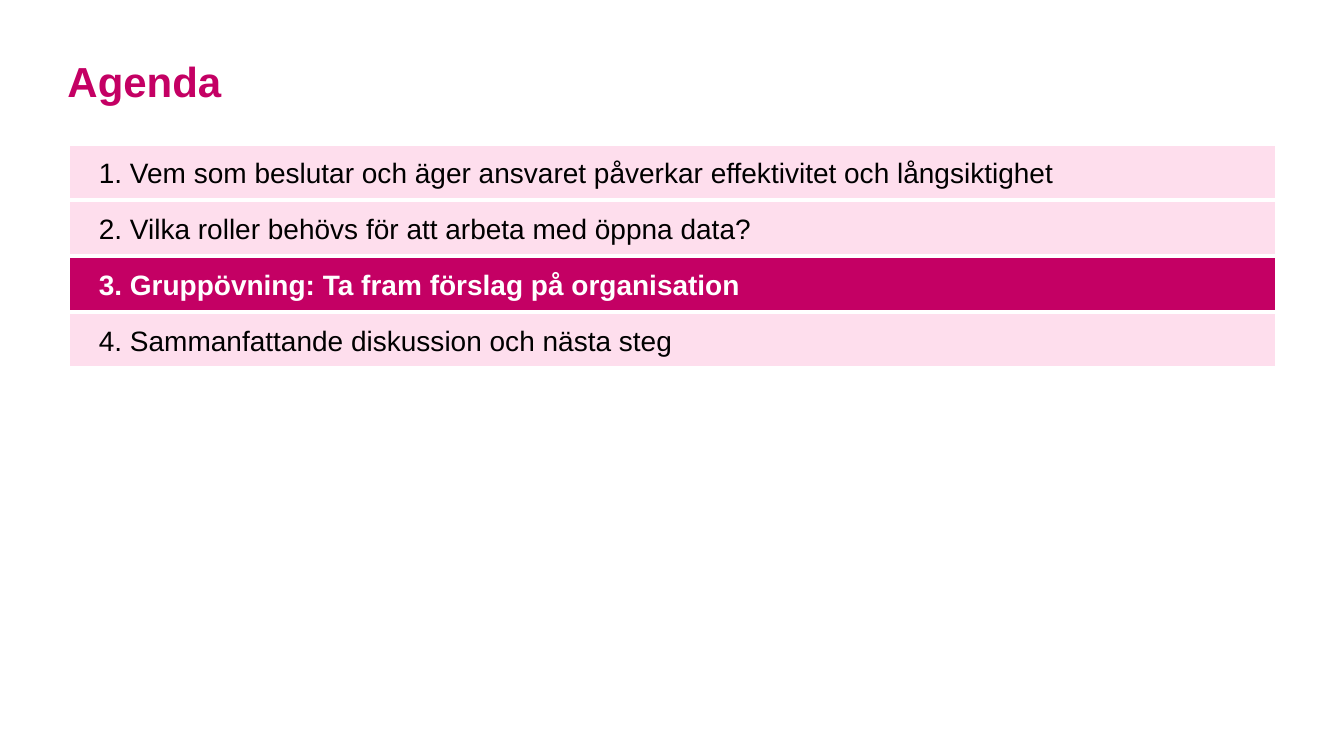
from dataclasses import dataclass

from pptx import Presentation
from pptx.dml.color import RGBColor as RGB
from pptx.enum.shapes import MSO_SHAPE as Shape
from pptx.enum.text import MSO_ANCHOR as Anchor, MSO_AUTO_SIZE as AutoSize, PP_ALIGN as Align
from pptx.util import Cm, Pt


@dataclass(frozen=True)
class Theme:
    font: str = "Arial"
    accent: RGB = RGB(0xC4, 0x00, 0x64)
    tint: RGB = RGB(0xFE, 0xDE, 0xED)
    dark: RGB = RGB(0, 0, 0)
    light: RGB = RGB(0xFF, 0xFF, 0xFF)
    title_size: Pt = Pt(30)
    item_size: Pt = Pt(20)
    gap_line: Pt = Pt(3)


THEME = Theme()
LEFT, WIDTH = Cm(1.7), Cm(30.48)
LIST_TOP, ROW_HEIGHT = Cm(3.63), Cm(1.41)
CURRENT = 3
AGENDA = [
    "Vem som beslutar och äger ansvaret påverkar effektivitet och långsiktighet",
    "Vilka roller behövs för att arbeta med öppna data?",
    "Gruppövning: Ta fram förslag på organisation",
    "Sammanfattande diskussion och nästa steg",
]


def apply(target, values):
    for name, value in values.items():
        setattr(target, name, value)


def write(sp, text, size, color, bold, frame, paragraph):
    tf = sp.text_frame
    apply(tf, {"word_wrap": True, "auto_size": AutoSize.NONE, **frame})
    p = tf.paragraphs[0]
    apply(p, {"alignment": Align.LEFT, **paragraph})
    r = p.add_run()
    r.text = text
    apply(r.font, {"name": THEME.font, "size": size, "bold": bold})
    r.font.color.rgb = color


def add_title(s, text):
    sp = s.shapes.title
    apply(sp, {"left": LEFT, "top": Cm(1.27), "width": WIDTH, "height": Cm(2.31)})
    frame = {"vertical_anchor": Anchor.TOP, "margin_left": 0, "margin_top": 0,
             "margin_right": 0, "margin_bottom": 0}
    write(sp, text, THEME.title_size, THEME.accent, True, frame, {"line_spacing": 1.1})


def add_agenda_item(s, number, text):
    current = number == CURRENT
    top = LIST_TOP + (number - 1) * ROW_HEIGHT
    sp = s.shapes.add_shape(Shape.RECTANGLE, LEFT, top, WIDTH, ROW_HEIGHT)
    sp.name = f"Agenda item {number}"
    sp.shadow.inherit = False
    sp.fill.solid()
    sp.fill.fore_color.rgb = THEME.accent if current else THEME.tint
    sp.line.color.rgb = THEME.light
    sp.line.width = THEME.gap_line
    frame = {"vertical_anchor": Anchor.MIDDLE, "margin_left": Cm(0.79),
             "margin_top": Cm(0.28), "margin_right": 0, "margin_bottom": Cm(0.28)}
    color = THEME.light if current else THEME.dark
    write(sp, f"{number}. {text}", THEME.item_size, color, current, frame, {})


def main():
    prs = Presentation()
    apply(prs, {"slide_width": Cm(33.87), "slide_height": Cm(19.05)})
    s = prs.slides.add_slide(prs.slide_layouts.get_by_name("Title Only"))
    add_title(s, "Agenda")
    for number, text in enumerate(AGENDA, start=1):
        add_agenda_item(s, number, text)
    prs.save("out.pptx")


if __name__ == "__main__":
    main()
